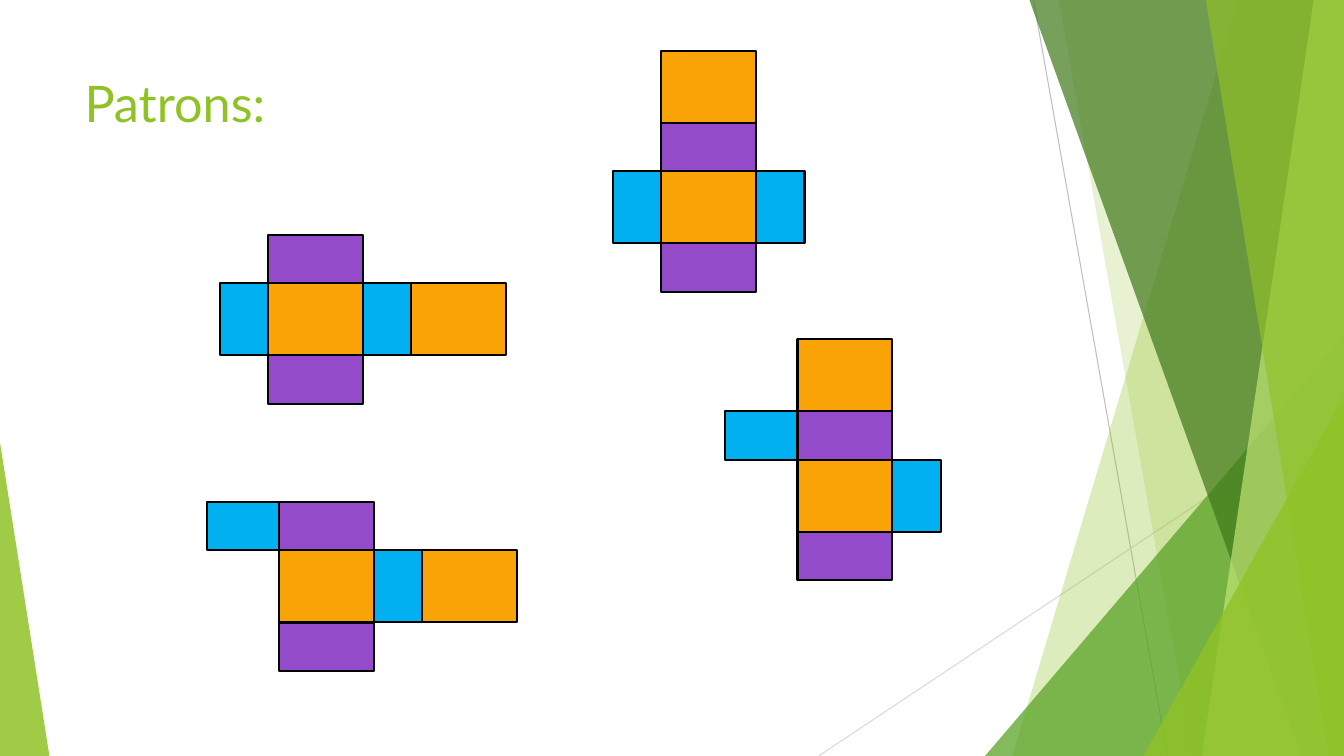
from lxml import etree
from pptx import Presentation
from pptx.dml.color import RGBColor
from pptx.enum.shapes import MSO_CONNECTOR, MSO_SHAPE
from pptx.enum.text import MSO_ANCHOR
from pptx.oxml.ns import qn
from pptx.util import Inches, Pt

LINE = MSO_CONNECTOR.STRAIGHT
RECT = MSO_SHAPE.RECTANGLE
TRI = MSO_SHAPE.ISOSCELES_TRIANGLE
TOP = MSO_ANCHOR.TOP

GREEN = RGBColor(0x90, 0xC2, 0x26)
LIME = RGBColor(0xC0, 0xE4, 0x74)
LEAF = RGBColor(0x54, 0xA0, 0x21)
MOSS = RGBColor(0x3F, 0x78, 0x19)
GREY = RGBColor(0xBF, 0xBF, 0xBF)
PALE = RGBColor(0xD9, 0xD9, 0xD9)
ORANGE = RGBColor(0xFA, 0xA3, 0x06)
BLUE = RGBColor(0x00, 0xB0, 0xF0)
PURPLE = RGBColor(0x93, 0x4B, 0xC9)
BLACK = RGBColor(0, 0, 0)

WIDE, HIGH = 13.33, 7.5
# Width, height and depth of the box that the nets fold into
W, H, D = 0.94, 0.715, 0.48

# Faces of a net: colour, then left, top, width and height from its front face
FRONT = (ORANGE, 0, 0, W, H)
RIGHT = (BLUE, W, 0, D, H)
LEFT = (BLUE, -D, 0, D, H)
ROOF = (PURPLE, 0, -D, W, D)
FLOOR = (PURPLE, 0, H, W, D)
FLAP = (BLUE, -H, -D, H, D)
BACK_SIDE = (ORANGE, W + D, 0, W, H)
BACK_TOP = (ORANGE, 0, -D - H, W, H)
CORE = [FRONT, RIGHT, ROOF, FLOOR]

NETS = [
    (2.66, 2.81, CORE + [LEFT, BACK_SIDE]),
    (6.56, 1.7, CORE + [LEFT, BACK_TOP]),
    (2.77, 5.46, CORE + [FLAP, BACK_SIDE]),
    (7.91, 4.56, CORE + [FLAP, BACK_TOP]),
]


def paint(shape, color, alpha=100):
    """Fill a shape, with its opacity in percent, and drop line and shadow."""
    shape.shadow.inherit = False
    shape.line.fill.background()
    shape.fill.solid()
    shape.fill.fore_color.rgb = color
    if alpha < 100:
        tone = shape.fill._xPr.find(".//" + qn("a:srgbClr"))
        etree.SubElement(tone, qn("a:alpha"), val=str(alpha * 1000))


def add_ray(slide, start, end, color):
    ray = slide.shapes.add_connector(LINE, *map(Inches, start + end))
    ray.line.color.rgb = color
    ray.line.width = Pt(0.75)
    etree.SubElement(ray._element.spPr, qn("a:effectLst"))


def add_band(slide, box, top, base, color, alpha):
    """Draw a slanted band from two left corners to the right edge of the box."""
    x, y, w, h = box
    dots = [(x + top, y), (x + w, y), (x + w, y + h), (x + base, y + h)]
    dots = [(Inches(a), Inches(b)) for a, b in dots]
    pen = slide.shapes.build_freeform(*dots[0])
    pen.add_line_segments(dots[1:])
    paint(pen.convert_to_shape(), color, alpha)


def add_wedge(slide, box, peak, color, alpha):
    wedge = slide.shapes.add_shape(TRI, *map(Inches, box))
    wedge.adjustments[0] = peak
    paint(wedge, color, alpha)


def add_decor(slide, box):
    """Layer the green bands and wedges in a box at the right of the slide."""
    x, y, w, h = box
    edge, base = x + w, y + h
    add_ray(slide, (x + 0.48, y), (x + 1.81, base), GREY)
    add_ray(slide, (edge, y + 4.03), (x - 1.65, base), PALE)
    add_band(slide, box, 2.51, 0.27, GREEN, 30)
    add_band(slide, box, 0.73, 2.06, GREEN, 20)
    add_wedge(slide, (x, base - 4.17, w, 4.17), 1, LEAF, 72)
    add_band(slide, box, 0.44, 3.14, MOSS, 70)
    add_band(slide, box, 3.26, 2.15, LIME, 70)
    add_band(slide, box, 2.19, 3.41, GREEN, 65)
    add_wedge(slide, (edge - 1.99, base - 3.57, 1.99, 3.57), 1, GREEN, 80)


def add_title(slide, box, text):
    frame = slide.shapes.add_textbox(*map(Inches, box)).text_frame
    frame.word_wrap = True
    frame.vertical_anchor = TOP
    run = frame.paragraphs[0].add_run()
    run.text = text
    run.font.name = "Lato"
    run.font.size = Pt(36)
    run.font.color.rgb = GREEN


def add_net(slide, x, y, faces):
    """Draw a net whose front face has its corner at x, y."""
    for color, dx, dy, w, h in faces:
        face = slide.shapes.add_shape(RECT, *map(Inches, (x + dx, y + dy, w, h)))
        paint(face, color)
        face.line.color.rgb = BLACK
        face.line.width = Pt(1.5)


def main():
    deck = Presentation()
    deck.slide_width, deck.slide_height = Inches(WIDE), Inches(HIGH)
    slide = deck.slides.add_slide(deck.slide_layouts[6])
    add_decor(slide, (9.77, 0, WIDE - 9.77, HIGH))
    add_wedge(slide, (0, HIGH - 3.11, 0.49, 3.11), 0, GREEN, 85)
    add_title(slide, (0.74, 0.67, 9.4, 1.44), "Patrons:")
    for x, y, faces in NETS:
        add_net(slide, x, y, faces)
    deck.save("out.pptx")


if __name__ == "__main__":
    main()
